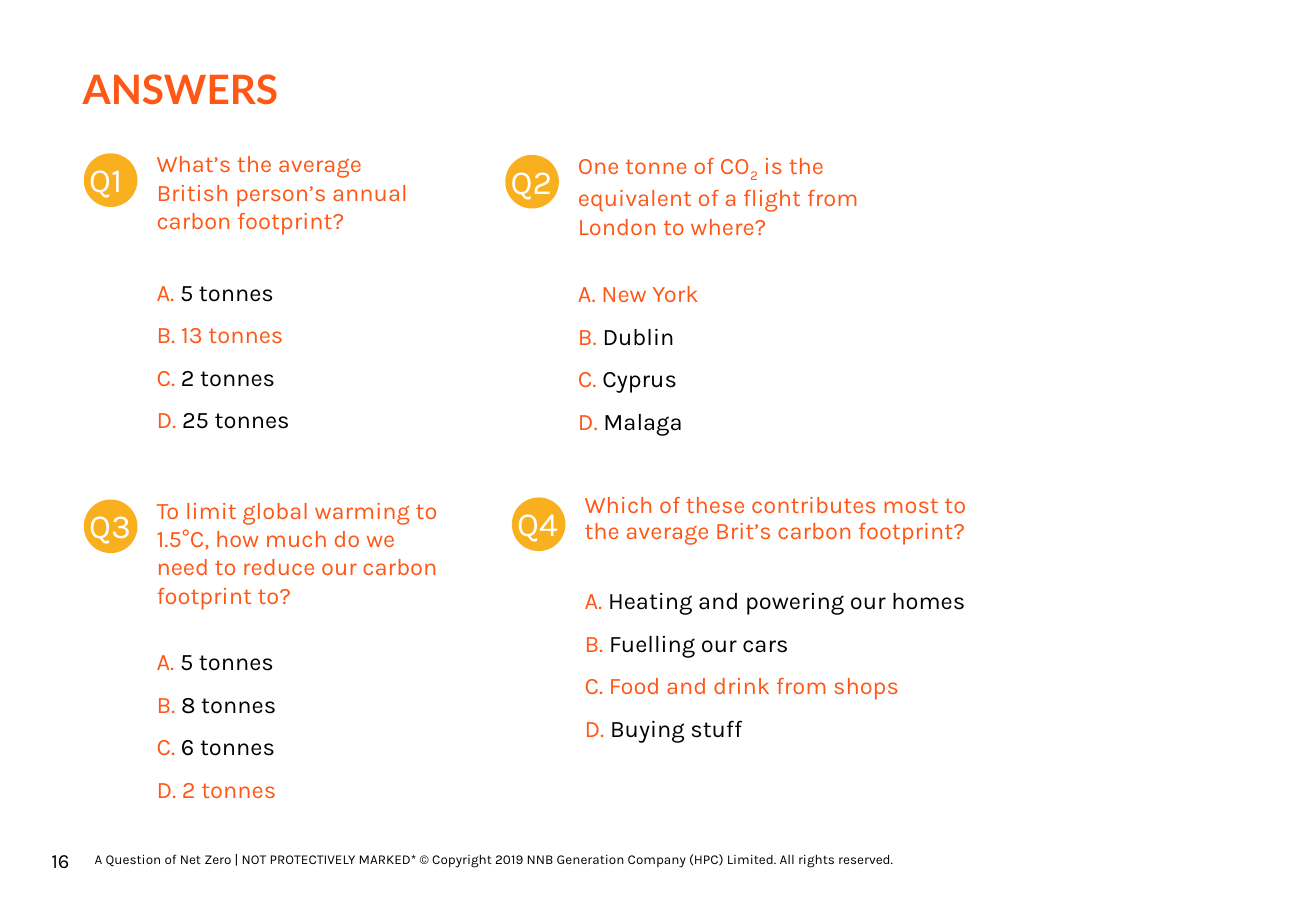
from pptx import Presentation
from pptx.dml.color import RGBColor as Rgb
from pptx.enum.shapes import MSO_SHAPE as Shape
from pptx.enum.text import MSO_ANCHOR as Anchor, MSO_AUTO_SIZE as Auto, PP_ALIGN as Align
from pptx.util import Pt

HUES = {"orange": "FE5716", "gold": "F9B01E", "black": "000000", "white": "FFFFFF"}
QUIZ = [
    (85.7, 85, 178, 67.7, "Q1",
     ["What’s the average British person’s annual carbon footprint?"], 1,
     ["5 tonnes", "13 tonnes", "2 tonnes", "25 tonnes"], 1),
    (335.5, 85.9, 196.6, 67.7, "Q2",
     ["One tonne of CO", "2", " is the equivalent of a flight from London to where?"], 1,
     ["New York", "Dublin", "Cyprus", "Malaga"], 0),
    (85.7, 290.2, 185.8, 81.4, "Q3",
     ["To limit global warming to 1.5°C, how much do we need to reduce our carbon footprint to?"], 1,
     ["5 tonnes", "8 tonnes", "6 tonnes", "2 tonnes"], 3),
    (339.4, 289, 255.6, 46.4, "Q4",
     ["Which of these contributes most to the average Brit’s carbon footprint?"], 0.9,
     ["Heating and powering our homes", "Fuelling our cars",
      "Food and drink from shops", "Buying stuff"], 2),
]


def style(run, size, hue, face="Karla", bold=False):
    font = run.font
    font.name, font.size, font.bold = face, Pt(size), bold
    font.color.rgb = Rgb.from_string(HUES[hue])


def fill(par, parts, size):
    for text, hue in parts:
        run = par.add_run()
        run.text = text
        style(run, size, hue)


def label(slide, box, rows, size, space=None, anchor=Anchor.TOP, align=Align.LEFT):
    frame = slide.shapes.add_textbox(*map(Pt, box)).text_frame
    frame.word_wrap = True
    frame.vertical_anchor = anchor
    for i, parts in enumerate(rows):
        par = frame.add_paragraph() if i else frame.paragraphs[0]
        par.alignment = align
        if space:
            par.line_spacing = space
        fill(par, parts, size)
    return frame


def badge(slide, x, y, name):
    disc = slide.shapes.add_shape(Shape.OVAL, Pt(x), Pt(y), Pt(31.8), Pt(31.8))
    disc.shadow.inherit = False
    disc.fill.solid()
    disc.fill.fore_color.rgb = Rgb.from_string(HUES["gold"])
    disc.line.fill.background()
    label(slide, (x - 4, y - 0.3, 44.6, 31.5), [[(name, "white")]], 20)


def quiz(slide, x, y, width, drop, name, ask, space, picks, right):
    badge(slide, x - 36, y + 5.9, name)
    frame = label(slide, (x, y, width, 58), [[(part, "orange") for part in ask]], 14, space)
    for run in frame.paragraphs[0].runs[1:2]:
        run._r.get_or_add_rPr().set("baseline", "-25000")
    rows = []
    for i, (key, pick) in enumerate(zip("ABCD", picks)):
        lead = f"{key}. "
        rows.append([(lead + pick, "orange")] if i == right
                    else [(lead, "orange"), (pick, "black")])
    label(slide, (x, y + drop, max(width, 170), 106.6), rows, 14, 1.5)


def head(slide, box):
    title = slide.shapes.title
    title.left, title.top, title.width, title.height = map(Pt, box)
    frame = title.text_frame
    frame.text = "ANSWERS"
    frame.auto_size = Auto.NONE
    frame.vertical_anchor = Anchor.MIDDLE
    par = frame.paragraphs[0]
    par.alignment = Align.LEFT
    par.line_spacing = 0.9
    style(par.runs[0], 24, "orange", "Lato", True)


def foot(slide, x, y):
    label(slide, (x, y, 31.7, 28.8), [[("16", "black")]], 12,
          anchor=Anchor.MIDDLE, align=Align.RIGHT)
    note = ("A Question of Net Zero | NOT PROTECTIVELY MARKED* © Copyright 2019 "
            "NNB Generation Company (HPC) Limited. All rights reserved.")
    label(slide, (x + 32.4, y + 2.2, 630.7, 23.8), [[(note, "black")]], 8, anchor=Anchor.MIDDLE)


def main():
    deck = Presentation()
    deck.slide_width, deck.slide_height = Pt(780), Pt(540)
    slide = deck.slides.add_slide(deck.slide_layouts[5])
    head(slide, (41.8, 41, 156.2, 25.9))
    for item in QUIZ:
        quiz(slide, *item)
    foot(slide, 16.6, 495.4)
    deck.save("out.pptx")


if __name__ == "__main__":
    main()
